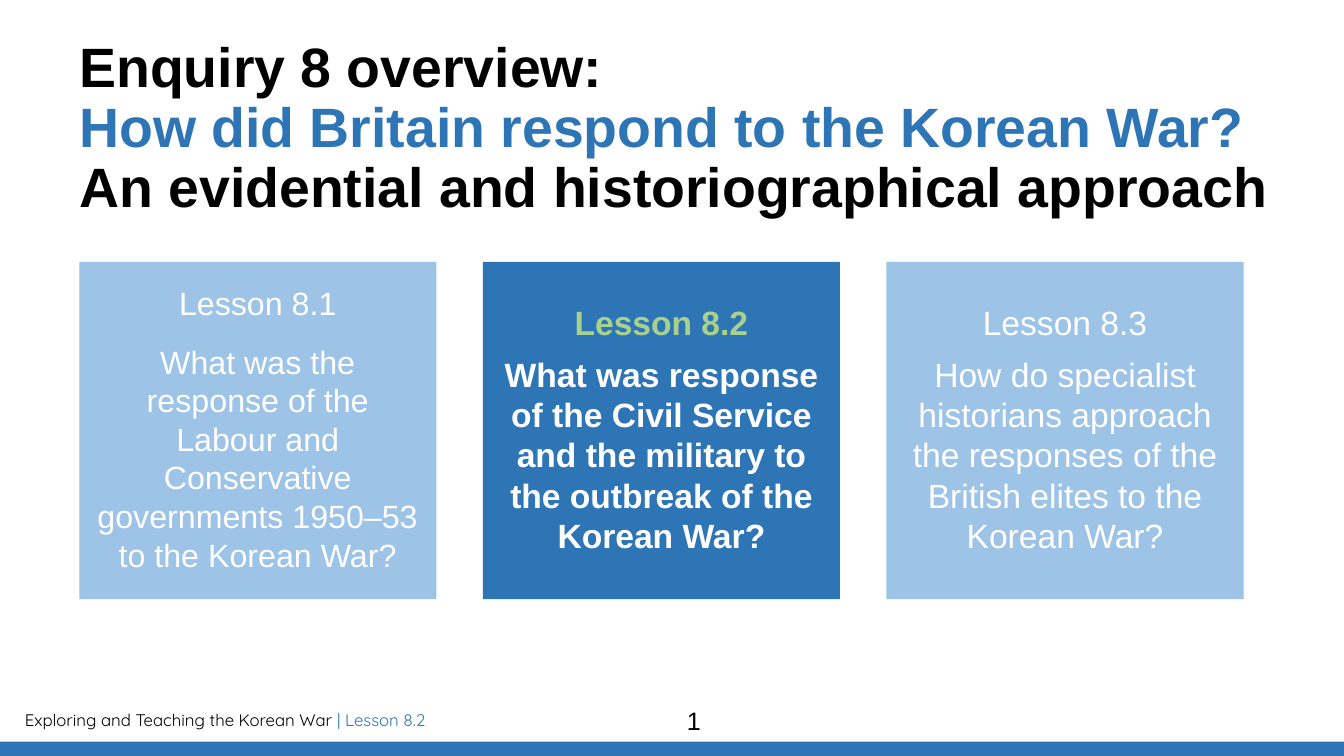
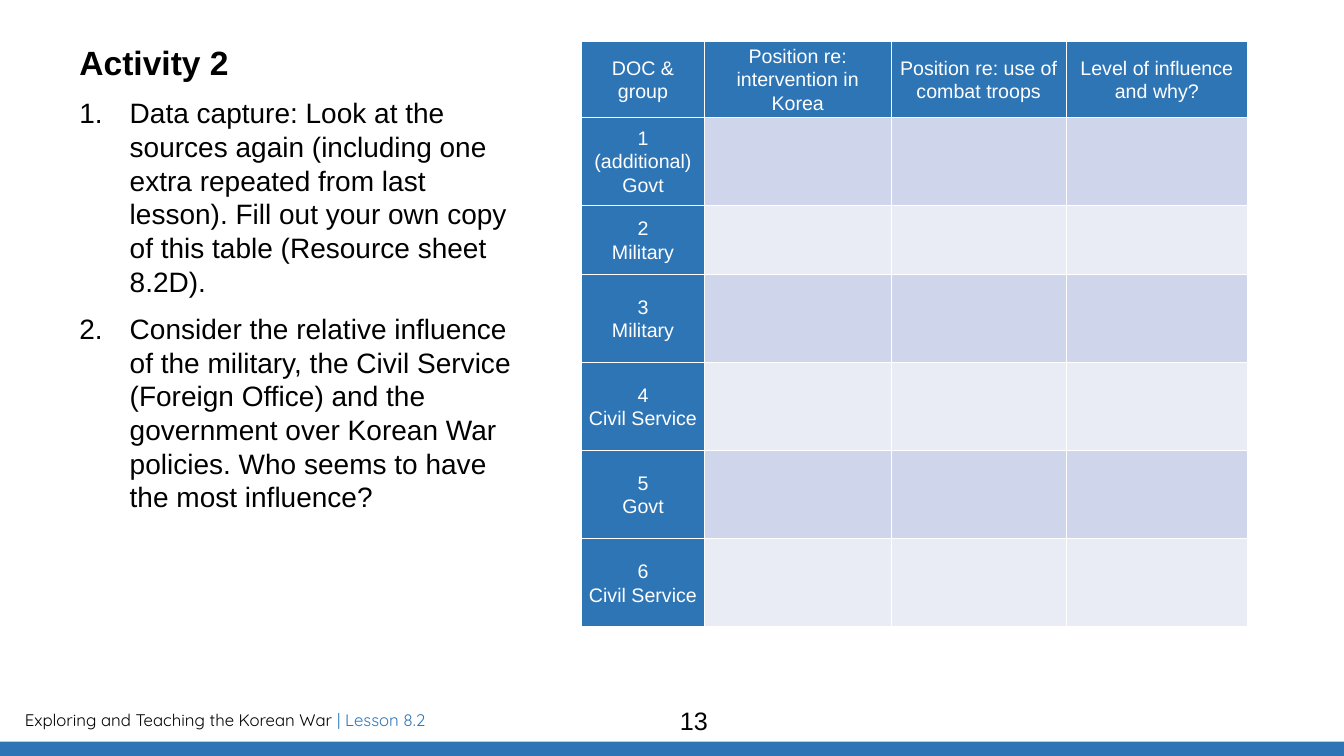
from lxml import etree
from pptx import Presentation
from pptx.dml.color import RGBColor
from pptx.enum import shapes, text
from pptx.oxml import ns
from pptx.util import Cm, Pt

BLUE = RGBColor(0x2E, 0x75, 0xB6)
PALE_BLUE = RGBColor(0x9D, 0xC3, 0xE6)
GREEN = RGBColor(0xA9, 0xD1, 0x8E)
BAND_DARK = RGBColor(0xCF, 0xD5, 0xEA)
BAND_LIGHT = RGBColor(0xE9, 0xEB, 0xF5)
BLACK = RGBColor(0, 0, 0)
WHITE = RGBColor(0xFF, 0xFF, 0xFF)

SLIDE_WIDTH, SLIDE_HEIGHT = Cm(33.87), Cm(19.05)
MARGIN = Cm(2)

FOOTER = [("Exploring and Teaching the Korean War ", BLACK), ("| Lesson 8.2", BLUE)]

TITLE = [
    ("Enquiry 8 overview:", BLACK),
    ("How did Britain respond to the Korean War?", BLUE),
    ("An evidential and historiographical approach", BLACK),
]
# heading, question, size, current lesson, space around the question
LESSONS = [
    ("Lesson 8.1", "What was the response of the Labour and Conservative governments "
     "1950–53 to the Korean War?", 23, False, 6),
    ("Lesson 8.2", "What was response of the Civil Service and the military to the "
     "outbreak of the Korean War?", 24, True, 0),
    ("Lesson 8.3", "How do specialist historians approach the responses of the British "
     "elites to the Korean War?", 24, False, 0),
]

ACTIVITY_HEADING = "Activity 2"
ACTIVITY_STEPS = [
    "Data capture: Look at the sources again (including one extra repeated from last "
    "lesson). Fill out your own copy of this table (Resource sheet 8.2D).",
    "Consider the relative influence of the military, the Civil Service (Foreign Office) "
    "and the government over Korean War policies. Who seems to have the most influence?",
]
TABLE_HEADINGS = ["DOC & group", "Position re: intervention in Korea",
                  "Position re: use of combat troops", "Level of influence and why?"]
TABLE_GROUPS = ["1\n(additional)\nGovt", "2\nMilitary", "3\nMilitary",
                "4\nCivil Service", "5\nGovt", "6\nCivil Service"]
COLUMN_WIDTHS = [3.09, 4.71, 4.41, 4.57]
ROW_HEIGHTS = [1.78, 2.22, 1.74, 2.22, 2.22, 2.22, 2.22]


def style(paragraph, size, color, bold=False, name="Arial"):
    font = paragraph.font
    font.name, font.size, font.bold = name, Pt(size), bold
    font.color.rgb = color


def add_text_box(slide, left, top, width, height, inset=None):
    frame = slide.shapes.add_textbox(left, top, width, height).text_frame
    frame.word_wrap = True
    if inset is not None:
        set_insets(frame, inset, inset)
    return frame


def set_insets(target, horizontal, vertical):
    target.margin_left = target.margin_right = horizontal
    target.margin_top = target.margin_bottom = vertical


def add_paragraph(frame, content):
    """Fill the empty first paragraph of a frame, or append another."""
    paragraph = frame.paragraphs[0]
    if paragraph.runs:
        paragraph = frame.add_paragraph()
    paragraph.text = content
    return paragraph


def add_rectangle(slide, left, top, width, height, fill):
    shape = slide.shapes.add_shape(shapes.MSO_SHAPE.RECTANGLE, left, top, width, height)
    shape.shadow.inherit = False
    shape.fill.solid()
    shape.fill.fore_color.rgb = fill
    shape.line.fill.background()
    return shape


def add_slide(presentation, number):
    """Add a blank slide with the footer, bottom band and page number."""
    slide = presentation.slides.add_slide(presentation.slide_layouts[6])
    paragraph = add_text_box(slide, Cm(0.38), Cm(17.75), Cm(19.86), Cm(0.77)).paragraphs[0]
    style(paragraph, 12, BLACK, name="Quicksand")
    for content, color in FOOTER:
        run = paragraph.add_run()
        run.text = content
        run.font.color.rgb = color
    band_top = Cm(18.69)
    add_rectangle(slide, 0, band_top, SLIDE_WIDTH, SLIDE_HEIGHT - band_top, BLUE)
    frame = add_text_box(slide, Cm(11.07), Cm(17.65), Cm(12.83), Cm(1.03))
    paragraph = add_paragraph(frame, str(number))
    paragraph.alignment = text.PP_ALIGN.CENTER
    style(paragraph, 18, BLACK)
    return slide


def add_lesson_card(slide, left, lesson):
    heading, question, size, current, space = lesson
    card = add_rectangle(slide, left, Cm(6.6), Cm(9), Cm(8.5), BLUE if current else PALE_BLUE)
    frame = card.text_frame
    frame.word_wrap = True
    frame.vertical_anchor = text.MSO_ANCHOR.MIDDLE
    set_insets(frame, Cm(0.36), Cm(0.36))
    for content, color in [(heading, GREEN if current else WHITE), (question, WHITE)]:
        paragraph = add_paragraph(frame, content)
        paragraph.alignment = text.PP_ALIGN.CENTER
        style(paragraph, size, color, current)
    first, last = frame.paragraphs
    first.line_spacing = 0.9
    first.space_after = Pt(8)
    last.space_before = last.space_after = Pt(space)


def number_paragraph(paragraph):
    """Turn on automatic numbering with a hanging indent."""
    properties = paragraph._p.get_or_add_pPr()
    properties.set("marL", str(Cm(1.27)))
    properties.set("indent", str(-Cm(1.27)))
    etree.SubElement(properties, ns.qn("a:buFont"), typeface="+mj-lt")
    etree.SubElement(properties, ns.qn("a:buAutoNum"), type="arabicPeriod")


def add_borders(cell):
    properties = cell._tc.get_or_add_tcPr()
    for index, side in enumerate(("lnL", "lnR", "lnT", "lnB")):
        line = etree.Element(ns.qn(f"a:{side}"), w=str(Pt(1)))
        fill = etree.SubElement(line, ns.qn("a:solidFill"))
        etree.SubElement(fill, ns.qn("a:srgbClr"), val=str(WHITE))
        properties.insert(index, line)


def add_activity_table(slide):
    rows = [TABLE_HEADINGS] + [[group, "", "", ""] for group in TABLE_GROUPS]
    table = slide.shapes.add_table(
        len(rows), len(TABLE_HEADINGS), Cm(14.66), Cm(1.05),
        Cm(sum(COLUMN_WIDTHS)), Cm(sum(ROW_HEIGHTS))).table
    for column, width in zip(table.columns, COLUMN_WIDTHS):
        column.width = Cm(width)
    for row_index, (row, height) in enumerate(zip(rows, ROW_HEIGHTS)):
        table.rows[row_index].height = Cm(height)
        for column_index, content in enumerate(row):
            cell = table.cell(row_index, column_index)
            band = BAND_DARK if row_index % 2 else BAND_LIGHT
            cell.fill.solid()
            cell.fill.fore_color.rgb = BLUE if content else band
            add_borders(cell)
            if not content:
                continue
            cell.vertical_anchor = text.MSO_ANCHOR.MIDDLE
            set_insets(cell, Cm(0.15), 0)
            cell.text = content
            for paragraph in cell.text_frame.paragraphs:
                paragraph.alignment = text.PP_ALIGN.CENTER
                paragraph.line_spacing = 1.07
                style(paragraph, 14, WHITE)


def build_overview(presentation):
    slide = add_slide(presentation, 1)
    frame = add_text_box(slide, MARGIN, Cm(1), Cm(31.42), Cm(3.68), 0)
    for content, color in TITLE:
        paragraph = add_paragraph(frame, content)
        paragraph.line_spacing = 0.9
        style(paragraph, 39.6, color, True)
    for index, lesson in enumerate(LESSONS):
        add_lesson_card(slide, MARGIN + index * Cm(10.17), lesson)


def build_activity(presentation):
    slide = add_slide(presentation, 13)
    frame = add_text_box(slide, MARGIN, Cm(1.05), Cm(10.92), Cm(12.09), 0)
    style(add_paragraph(frame, ACTIVITY_HEADING), 24, BLACK, True)
    for step in ACTIVITY_STEPS:
        paragraph = add_paragraph(frame, step)
        number_paragraph(paragraph)
        paragraph.space_before = Pt(10)
        style(paragraph, 20, BLACK)
    add_activity_table(slide)


def main():
    presentation = Presentation()
    presentation.slide_width, presentation.slide_height = SLIDE_WIDTH, SLIDE_HEIGHT
    build_overview(presentation)
    build_activity(presentation)
    presentation.save("out.pptx")


if __name__ == "__main__":
    main()
